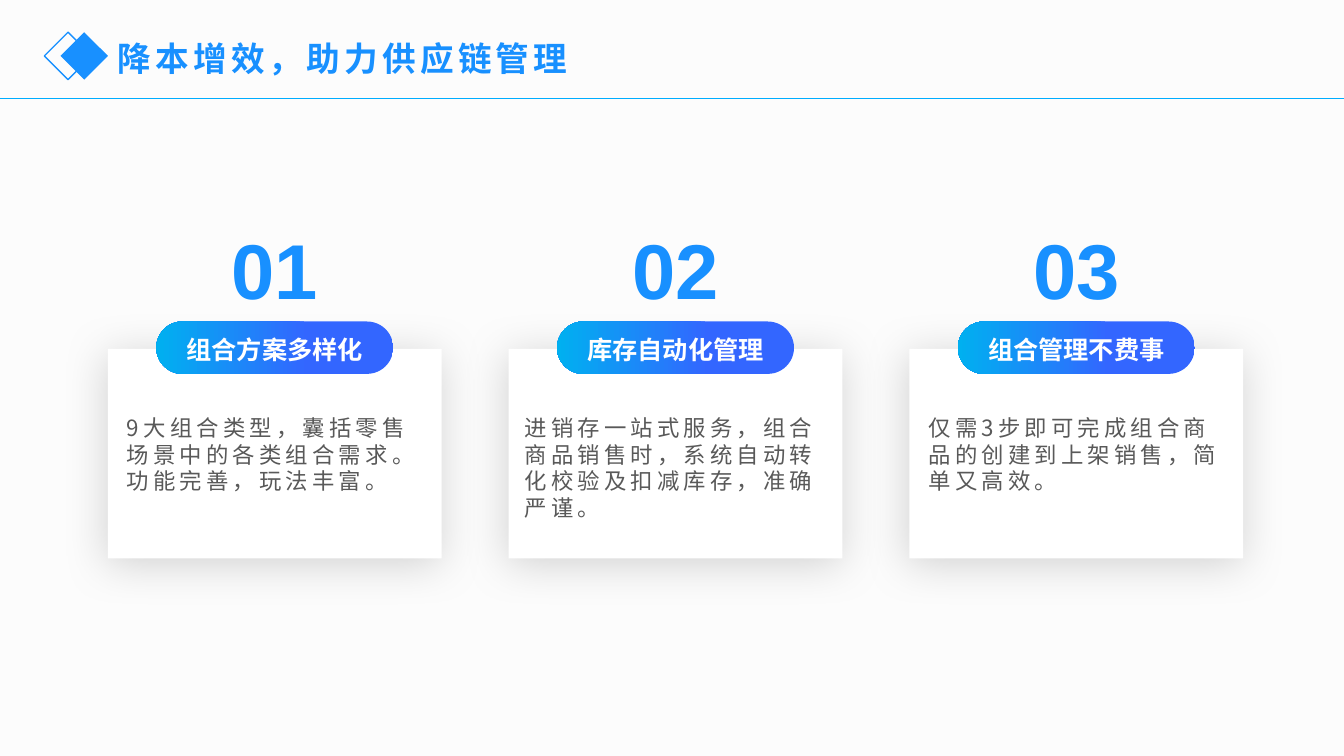
"""Build a slide with three numbered cards on supply chain management."""
from lxml.etree import SubElement
from pptx import Presentation
from pptx.dml.color import RGBColor
from pptx.enum.shapes import MSO_CONNECTOR, MSO_SHAPE
from pptx.enum.text import MSO_ANCHOR, PP_ALIGN
from pptx.oxml import parse_xml
from pptx.oxml.ns import nsdecls, qn
from pptx.util import Inches, Pt

paint = RGBColor.from_string
BLUE, WHITE, GREY = "1890FF", "FFFFFF", "595959"
CJK = "Noto Sans CJK SC"

deck = Presentation()
deck.slide_width, deck.slide_height = Inches(13.33), Inches(7.5)
COL, ROW = deck.slide_width / 100, deck.slide_height / 100
slide = deck.slides.add_slide(deck.slide_layouts[6])
slide.background.fill.solid()
slide.background.fill.fore_color.rgb = paint("FCFCFC")


def grid(left, top, cols, rows):
    """Turn columns and rows into slide lengths."""
    return round(left * COL), round(top * ROW), round(cols * COL), round(rows * ROW)


def write(words, area, style, spacing=0, align=PP_ALIGN.LEFT, wrap=True):
    """Put one paragraph of styled words into an area."""
    frame = slide.shapes.add_textbox(*grid(*area)).text_frame
    frame.word_wrap = wrap
    frame.vertical_anchor = MSO_ANCHOR.TOP
    paragraph = frame.paragraphs[0]
    paragraph.alignment = align
    run = paragraph.add_run()
    run.text = words
    for key, value in style.items():
        if key == "color":
            run.font.color.rgb = paint(value)
        else:
            setattr(run.font, key, value)
    if style["name"] == CJK:
        paragraph.line_spacing = Pt(1.2 * style["size"].pt)
        frame.margin_top = Inches(0.05) + round(0.07 * style["size"])
    else:
        frame.margin_top = Inches(0.13)
    properties = run.font._element if hasattr(run.font, "_element") else run._r.get_or_add_rPr()
    properties.set("spc", str(spacing * 100))
    SubElement(properties, qn("a:ea")).set("typeface", style["name"])


title_style = {"name": CJK, "size": Pt(24), "bold": True, "color": BLUE}
number_style = {"name": "Arial", "size": Pt(55.5), "bold": True, "color": BLUE}
label_style = {"name": CJK, "size": Pt(18), "bold": True, "color": WHITE}
body_style = {"name": CJK, "size": Pt(16), "bold": False, "color": GREY}

header_y = round(13.07 * ROW)
header_rule = slide.shapes.add_connector(
    MSO_CONNECTOR.STRAIGHT, 0, header_y, deck.slide_width, header_y)
header_rule.line.color.rgb = paint("00ADFF")
header_rule.line.width = Pt(1)
SubElement(header_rule._element.spPr, qn("a:effectLst"))

for left, filled in ((3.3, False), (4.5, True)):
    diamond = slide.shapes.add_shape(MSO_SHAPE.DIAMOND, *grid(left, 4.27, 3.53, 6.27))
    diamond.shadow.inherit = False
    if filled:
        diamond.fill.solid()
        diamond.fill.fore_color.rgb = paint(BLUE)
        diamond.line.fill.background()
    else:
        diamond.fill.background()
        diamond.line.color.rgb = paint(BLUE)
        diamond.line.width = Pt(1)

write("降本增效，助力供应链管理", (8.03, 4, 41.19, 6.67), title_style, spacing=3)

cards = [
    ("组合方案多样化", "9大组合类型，囊括零售场景中的各类组合需求。功能完善，玩法丰富。",
     0.68, 23.41, 12.13),
    ("库存自动化管理", "进销存一站式服务，组合商品销售时，系统自动转化校验及扣减库存，准确严谨。",
     0.45, 24.98, 15.73),
    ("组合管理不费事", "仅需3步即可完成组合商品的创建到上架销售，简单又高效。",
     0.68, 23.41, 12.13),
]
FIRST, PITCH, CARD = 8.03, 29.82, 24.83
PILL, LABEL, NUMBER = 17.63, 14.78, 13.5

for index, (label, body, indent, body_cols, body_rows) in enumerate(cards):
    left = FIRST + index * PITCH
    middle = left + CARD / 2

    panel = slide.shapes.add_shape(MSO_SHAPE.RECTANGLE, *grid(left, 46.13, CARD, 27.73))
    panel.fill.solid()
    panel.fill.fore_color.rgb = paint(WHITE)
    panel.line.fill.background()
    panel._element.spPr.append(parse_xml(
        f'<a:effectLst {nsdecls("a")}><a:outerShdw blurRad="{Pt(32)}" dist="{Pt(4)}" '
        f'dir="{108 * 60000}" algn="ctr" rotWithShape="0"><a:srgbClr val="000000">'
        '<a:alpha val="16000"/></a:srgbClr></a:outerShdw></a:effectLst>'))

    pill = slide.shapes.add_shape(
        MSO_SHAPE.ROUNDED_RECTANGLE, *grid(middle - PILL / 2, 42.53, PILL, 6.93))
    pill.adjustments[0] = 0.5
    pill.shadow.inherit = False
    pill.line.fill.background()
    pill.fill.gradient()
    pill.fill.gradient_angle = 180
    for stop, (position, tint) in zip(pill.fill.gradient_stops,
                                      ((0.36, "3366FF"), (1, "00B0F0"))):
        stop.position = position
        stop.color.rgb = paint(tint)

    write(body, (left + indent, 53.87, body_cols, body_rows), body_style, spacing=3)
    write(label, (middle - LABEL / 2, 43.33, LABEL, 5.33), label_style,
          align=PP_ALIGN.CENTER, wrap=False)
    write(f"{index + 1:02d}", (middle - NUMBER / 2, 27.6, NUMBER, 12.93), number_style,
          align=PP_ALIGN.CENTER)

deck.save("out.pptx")
